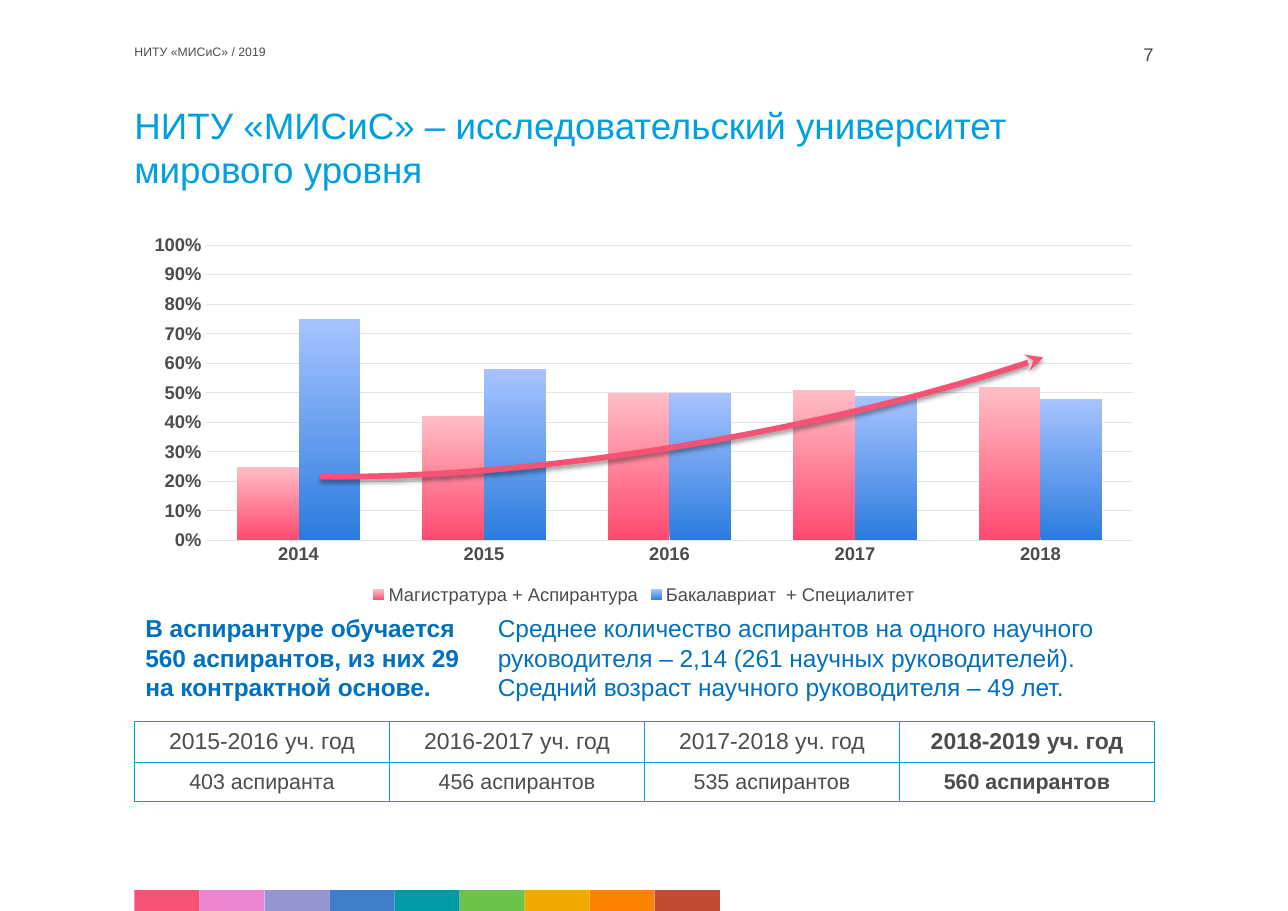
"""Build the slide on postgraduate numbers: chart, trend arrow, notes and table."""
from dataclasses import dataclass, field
from typing import Any

from lxml.etree import SubElement
from pptx import Presentation
from pptx.chart.data import CategoryChartData
from pptx.dml.color import RGBColor
from pptx.enum.chart import XL_CHART_TYPE as ChartType
from pptx.enum.chart import XL_LEGEND_POSITION as LegendPosition
from pptx.enum.chart import XL_TICK_MARK as TickMark
from pptx.enum.shapes import MSO_SHAPE as ShapeKind
from pptx.enum.text import MSO_ANCHOR as Anchor
from pptx.enum.text import MSO_AUTO_SIZE as AutoSize
from pptx.enum.text import PP_ALIGN as Align
from pptx.oxml import parse_xml
from pptx.oxml.ns import nsdecls, qn
from pptx.util import Inches, Pt

SLIDE_WIDTH, SLIDE_HEIGHT = Inches(11.69), Inches(8.27)
COLORS = {"title": "009FDF", "text": "4C4C4C", "note": "0070C0",
          "grid": "E4E4E4", "arrow": "F65275"}
STRIP = ["F65275", "EC86D0", "9595D2", "407EC9", "009CA6",
         "6CC24A", "F2A900", "FF8200", "C04C36"]
YEARS = ["2014", "2015", "2016", "2017", "2018"]
TABLE_ROWS = [
    ["2015-2016 уч. год", "2016-2017 уч. год", "2017-2018 уч. год", "2018-2019 уч. год"],
    ["403 аспиранта", "456 аспирантов", "535 аспирантов", "560 аспирантов"],
]
ROW_SIZES = [15, 14]
ROW_HEIGHTS = [4.35, 4.11]
NO_MARGINS = dict.fromkeys(["margin_left", "margin_top", "margin_right", "margin_bottom"], 0)


@dataclass
class Area:
    """A box in percent of the slide's width and height."""
    left: float
    top: float
    width: float
    height: float

    def lengths(self) -> tuple[int, int, int, int]:
        """Return left, top, width and height in slide units."""
        return (share_x(self.left), share_y(self.top),
                share_x(self.width), share_y(self.height))


@dataclass
class Label:
    """A text box with its wording and format."""
    area: Area
    text: str
    size: float
    color: str
    bold: bool = False
    frame: dict[str, Any] = field(default_factory=dict)
    paragraph: dict[str, Any] = field(default_factory=dict)


@dataclass
class BarSeries:
    """One chart series with its gradient from bottom to top."""
    name: str
    values: list[float]
    gradient: list[str]


TITLE = Label(Area(10.44, 11.25, 79.13, 11.85),
              "НИТУ «МИСиС» – исследовательский университет мирового уровня", 24, "title",
              frame=NO_MARGINS | {"vertical_anchor": Anchor.TOP, "auto_size": AutoSize.NONE},
              paragraph={"alignment": Align.LEFT, "line_spacing": Pt(28.8)})
LABELS = [
    Label(Area(10.44, 4.84, 69.03, 4.72), "НИТУ «МИСиС» / 2019", 8, "text", frame=NO_MARGINS),
    Label(Area(81.18, 4.72, 8.38, 4.72), "7", 12, "text", frame=NO_MARGINS,
          paragraph={"alignment": Align.RIGHT}),
    Label(Area(10.44, 66.75, 27.37, 11),
          "В аспирантуре обучается 560 аспирантов, из них 29 на контрактной основе.",
          16, "note", True, paragraph={"space_after": Pt(12)}),
    Label(Area(37.81, 66.75, 51.84, 11),
          "Среднее количество аспирантов на одного научного руководителя – 2,14 "
          "(261 научных руководителей). Средний возраст научного руководителя – 49 лет.",
          16, "note", paragraph={"space_after": Pt(12)}),
]
SERIES = [
    BarSeries("Магистратура + Аспирантура", [0.25, 0.42, 0.5, 0.51, 0.52], ["FF4970", "FFBEC6"]),
    BarSeries("Бакалавриат  + Специалитет", [0.75, 0.58, 0.5, 0.49, 0.48], ["2B7CDE", "A7C3FF"]),
]
SWATCH = Area(10.44, 97.7, 5.05, 2.42)
CHART = Area(10.44, 25.03, 79.13, 41.84)
TABLE = Area(10.44, 79.2, 79.21, sum(ROW_HEIGHTS))
ARROW = Area(3.85, 15.24, 97.86, 33.49)
PLOT_LAYOUT = {"layoutTarget": "inner", "xMode": "edge", "yMode": "edge",
               "x": 0.07, "y": 0.045, "w": 0.91, "h": 0.775}


def share_x(percent: float) -> int:
    return round(SLIDE_WIDTH * percent / 100)


def share_y(percent: float) -> int:
    return round(SLIDE_HEIGHT * percent / 100)


def apply(target: Any, values: dict[str, Any]) -> None:
    for name, value in values.items():
        setattr(target, name, value)


def format_font(font: Any, size: float, color: str, bold: bool = False) -> None:
    apply(font, {"name": "Arial", "size": Pt(size), "bold": bold})
    font.color.rgb = RGBColor.from_string(COLORS[color])


def fill_text(shape: Any, label: Label) -> None:
    frame = shape.text_frame
    frame.text = label.text
    apply(frame, {"word_wrap": True} | label.frame)
    paragraph = frame.paragraphs[0]
    apply(paragraph, label.paragraph)
    format_font(paragraph.runs[0].font, label.size, label.color, label.bold)


def add_strip(slide: Any) -> None:
    for index, color in enumerate(STRIP):
        area = Area(SWATCH.left + index * SWATCH.width, SWATCH.top, SWATCH.width, SWATCH.height)
        swatch = slide.shapes.add_shape(ShapeKind.RECTANGLE, *area.lengths())
        swatch.shadow.inherit = False
        swatch.fill.solid()
        swatch.fill.fore_color.rgb = RGBColor.from_string(color)
        swatch.line.fill.background()


def add_bar_chart(slide: Any) -> None:
    data = CategoryChartData(number_format="0%")
    data.categories = YEARS
    for series in SERIES:
        data.add_series(series.name, series.values)
    chart = slide.shapes.add_chart(ChartType.COLUMN_CLUSTERED, *CHART.lengths(), data).chart
    format_font(chart.font, 10, "title")
    apply(chart, {"has_title": False, "has_legend": True})
    apply(chart.legend, {"position": LegendPosition.BOTTOM, "include_in_layout": False})
    format_font(chart.legend.font, 12, "text")
    plot = chart.plots[0]
    apply(plot, {"gap_width": 100, "overlap": 0, "vary_by_categories": False})
    for bars, series in zip(plot.series, SERIES):
        bars.format.fill.gradient()
        bars.format.fill.gradient_angle = 90
        for stop, color in zip(bars.format.fill.gradient_stops, series.gradient):
            stop.color.rgb = RGBColor.from_string(color)
    years, shares = chart.category_axis, chart.value_axis
    for axis in (years, shares):
        apply(axis, {"major_tick_mark": TickMark.NONE, "minor_tick_mark": TickMark.NONE})
        format_font(axis.tick_labels.font, 12, "text", True)
    apply(shares, {"minimum_scale": 0, "maximum_scale": 1, "major_unit": 0.1,
                   "has_major_gridlines": True})
    apply(shares.tick_labels, {"number_format": "0%", "number_format_is_linked": False})
    shares.format.line.fill.background()
    for line in (years.format.line, shares.major_gridlines.format.line):
        line.width = Pt(0.75)
        line.color.rgb = RGBColor.from_string(COLORS["grid"])
    layout = parse_xml(f"<c:layout {nsdecls('c')}><c:manualLayout/></c:layout>")
    for name, value in PLOT_LAYOUT.items():
        SubElement(layout[0], qn(f"c:{name}")).set("val", str(value))
    plot_area = next(chart.element.iter(qn("c:plotArea")))
    plot_area.insert(0, layout)


def add_arrow(slide: Any) -> None:
    arrow = slide.shapes.add_shape(ShapeKind.ARC, *ARROW.lengths())
    arrow.rotation = 170.1
    arrow.adjustments[0], arrow.adjustments[1] = 120.11, 205.6
    arrow.fill.background()
    arrow.line.width = Pt(3.75)
    arrow.line.color.rgb = RGBColor.from_string(COLORS["arrow"])
    arrow.shadow.inherit = False
    properties = arrow.element.spPr
    SubElement(properties.find(qn("a:ln")), qn("a:headEnd")).set("type", "stealth")
    properties.find(qn("a:effectLst")).append(parse_xml(
        f'<a:outerShdw {nsdecls("a")} blurRad="{Pt(3.1)}" dist="{Pt(1.6)}" dir="5400000" '
        'rotWithShape="0"><a:srgbClr val="000000"><a:alpha val="38000"/></a:srgbClr>'
        '</a:outerShdw>'))


def add_year_table(slide: Any) -> None:
    columns = len(TABLE_ROWS[0])
    table = slide.shapes.add_table(len(TABLE_ROWS), columns, *TABLE.lengths()).table
    apply(table, {"first_row": False, "horz_banding": False})
    for row, texts in enumerate(TABLE_ROWS):
        table.rows[row].height = share_y(ROW_HEIGHTS[row])
        for column, text in enumerate(texts):
            cell = table.cell(row, column)
            apply(cell, {"text": text, "vertical_anchor": Anchor.MIDDLE,
                         "margin_top": Inches(0.06), "margin_bottom": Inches(0.06)})
            paragraph = cell.text_frame.paragraphs[0]
            paragraph.alignment = Align.CENTER
            format_font(paragraph.runs[0].font, ROW_SIZES[row], "text", column == columns - 1)
            for side in "LRTB":
                cell._tc.get_or_add_tcPr().append(parse_xml(
                    f'<a:ln{side} {nsdecls("a")} w="{Pt(1)}"><a:solidFill>'
                    f'<a:srgbClr val="{COLORS["title"]}"/></a:solidFill></a:ln{side}>'))
            cell.fill.background()


def main() -> None:
    presentation = Presentation()
    apply(presentation, {"slide_width": SLIDE_WIDTH, "slide_height": SLIDE_HEIGHT})
    slide = presentation.slides.add_slide(presentation.slide_layouts.get_by_name("Title Only"))
    title = slide.shapes.title
    apply(title, dict(zip(["left", "top", "width", "height"], TITLE.area.lengths())))
    fill_text(title, TITLE)
    add_strip(slide)
    for label in LABELS:
        fill_text(slide.shapes.add_textbox(*label.area.lengths()), label)
    add_year_table(slide)
    add_bar_chart(slide)
    add_arrow(slide)
    presentation.save("out.pptx")


if __name__ == "__main__":
    main()
